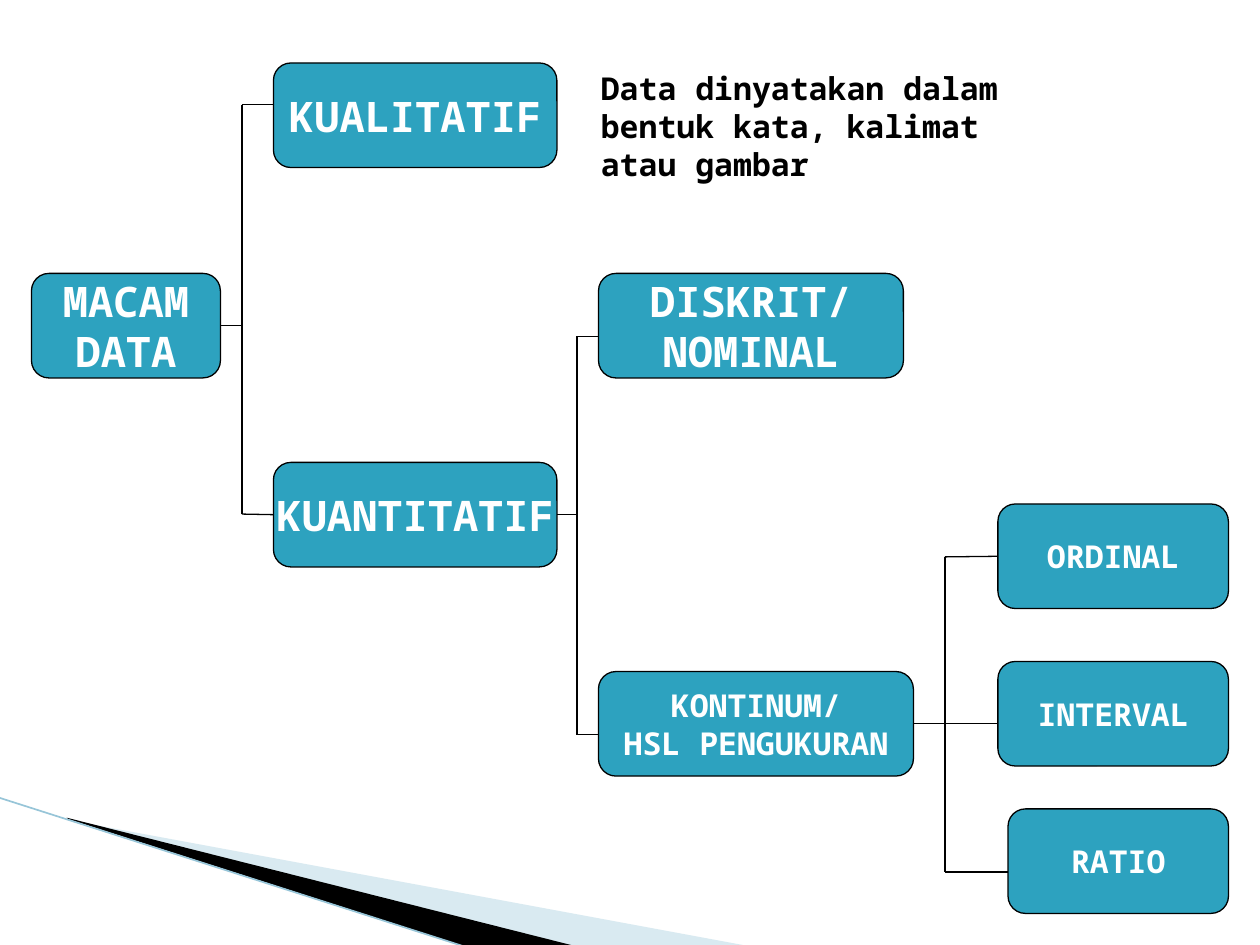
from dataclasses import dataclass

from lxml import etree
from pptx import Presentation
from pptx.dml.color import RGBColor
from pptx.enum import shapes, text
from pptx.oxml.ns import qn
from pptx.util import Inches, Pt


@dataclass(frozen=True)
class Theme:
    font: str = "Noto Sans Mono"
    box: str = "2DA2BF"
    ink: str = "000000"
    on_box: str = "FFFFFF"
    pale: str = "A0CBDC"
    edge: str = "97C5D8"
    large: int = 24
    small: int = 18
    rule: float = 0.75
    edge_rule: float = 0.95


BOX_HEIGHT = 0.83
RIGHT, LEFT = 3, 1  # connection sites


def middle(box):
    return (box.top + box.height / 2) / Inches(1)


class DiagramSlide:
    def __init__(self, slide, theme):
        self.shapes = slide.shapes
        self.theme = theme

    def add_lines(self, frame, lines, size, color, align):
        for i, line in enumerate(lines):
            paragraph = frame.paragraphs[0] if i == 0 else frame.add_paragraph()
            paragraph.alignment = align
            run = paragraph.add_run()
            run.text = line
            run.font.name = self.theme.font
            run.font.size = Pt(size)
            run.font.bold = True
            run.font.color.rgb = RGBColor.from_string(color)

    def box(self, left, top, width, lines, size):
        box = self.shapes.add_shape(
            shapes.MSO_SHAPE.ROUNDED_RECTANGLE,
            Inches(left), Inches(top), Inches(width), Inches(BOX_HEIGHT))
        box.adjustments[0] = 0.167
        box.shadow.inherit = False
        box.fill.solid()
        box.fill.fore_color.rgb = RGBColor.from_string(self.theme.box)
        box.line.color.rgb = RGBColor.from_string(self.theme.ink)
        box.line.width = Pt(self.theme.rule)
        box.text_frame.word_wrap = False
        box.text_frame.vertical_anchor = text.MSO_ANCHOR.MIDDLE
        self.add_lines(box.text_frame, lines, size, self.theme.on_box,
                       text.PP_ALIGN.CENTER)
        return box

    def note(self, left, top, width, height, words):
        note = self.shapes.add_textbox(
            Inches(left), Inches(top), Inches(width), Inches(height))
        note.text_frame.word_wrap = True
        self.add_lines(note.text_frame, [words], self.theme.small,
                       self.theme.ink, text.PP_ALIGN.LEFT)

    def line(self, x1, y1, x2, y2, color=None, width=None):
        line = self.shapes.add_connector(
            shapes.MSO_CONNECTOR.STRAIGHT,
            Inches(x1), Inches(y1), Inches(x2), Inches(y2))
        line.line.color.rgb = RGBColor.from_string(color or self.theme.ink)
        line.line.width = Pt(width or self.theme.rule)
        etree.SubElement(line._element.spPr, qn("a:effectLst"))
        return line

    def bracket(self, parent, spine, children):
        """Join a parent to (child, height) pairs through a vertical spine.

        A child whose height is None is reached straight from the parent.
        """
        heights = [y for _, y in children if y is not None]
        self.line(spine, min(heights), spine, max(heights))

        parent_right = (parent.left + parent.width) / Inches(1)
        straight = [child for child, y in children if y is None]
        stem_end = straight[0].left / Inches(1) if straight else spine
        stem = self.line(parent_right, middle(parent), stem_end, middle(parent))
        stem.begin_connect(parent, RIGHT)

        for child, y in children:
            if y is None:
                continue
            branch = self.line(spine, y, child.left / Inches(1), y)
            if abs(y - middle(child)) < 0.02:
                branch.end_connect(child, LEFT)

    def wedge(self, points, color, opacity=None):
        corners = [(Inches(x), Inches(y)) for x, y in points]
        builder = self.shapes.build_freeform(*corners[0])
        builder.add_line_segments(corners[1:], close=True)
        wedge = builder.convert_to_shape()
        wedge.shadow.inherit = False
        wedge.line.fill.background()
        wedge.fill.solid()
        wedge.fill.fore_color.rgb = RGBColor.from_string(color)
        if opacity is not None:
            rgb = wedge._element.spPr.find(qn("a:solidFill")).find(qn("a:srgbClr"))
            etree.SubElement(rgb, qn("a:alpha")).set("val", str(opacity * 1000))


def main():
    deck = Presentation()
    deck.slide_width, deck.slide_height = Inches(10), Inches(7.5)
    theme = Theme()
    page = DiagramSlide(deck.slides.add_slide(deck.slide_layouts[6]), theme)

    page.wedge([(0.55, 6.51), (5.95, 7.51), (4.56, 7.51), (0.55, 6.5)],
               theme.pale, opacity=40)
    page.wedge([(0.53, 6.49), (4.57, 7.51), (3.72, 7.52), (0.54, 6.5)],
               theme.ink)
    page.line(-0.01, 6.33, 3.71, 7.52, theme.edge, theme.edge_rule)

    large, small = theme.large, theme.small
    data_types = page.box(0.25, 2.17, 1.5, ["MACAM", "DATA"], large)
    qualitative = page.box(2.17, 0.5, 2.25, ["KUALITATIF"], large)
    quantitative = page.box(2.17, 3.67, 2.25, ["KUANTITATIF"], large)
    discrete = page.box(4.75, 2.17, 2.42, ["DISKRIT/", "NOMINAL"], large)
    continuous = page.box(4.75, 5.33, 2.5, ["KONTINUM/", "HSL PENGUKURAN"], small)
    ordinal = page.box(7.92, 4, 1.83, ["ORDINAL"], small)
    interval = page.box(7.92, 5.25, 1.83, ["INTERVAL"], small)
    ratio = page.box(8, 6.42, 1.75, ["RATIO"], small)

    page.bracket(data_types, 1.92, [(qualitative, 0.83), (quantitative, 4.08)])
    page.bracket(quantitative, 4.58, [(discrete, 2.67), (continuous, 5.83)])
    page.bracket(continuous, 7.5,
                 [(ordinal, 4.42), (interval, None), (ratio, 6.92)])

    page.note(4.67, 0.5, 3.75, 1.01,
              "Data dinyatakan dalam bentuk kata, kalimat atau gambar")

    deck.save("out.pptx")


if __name__ == "__main__":
    main()
